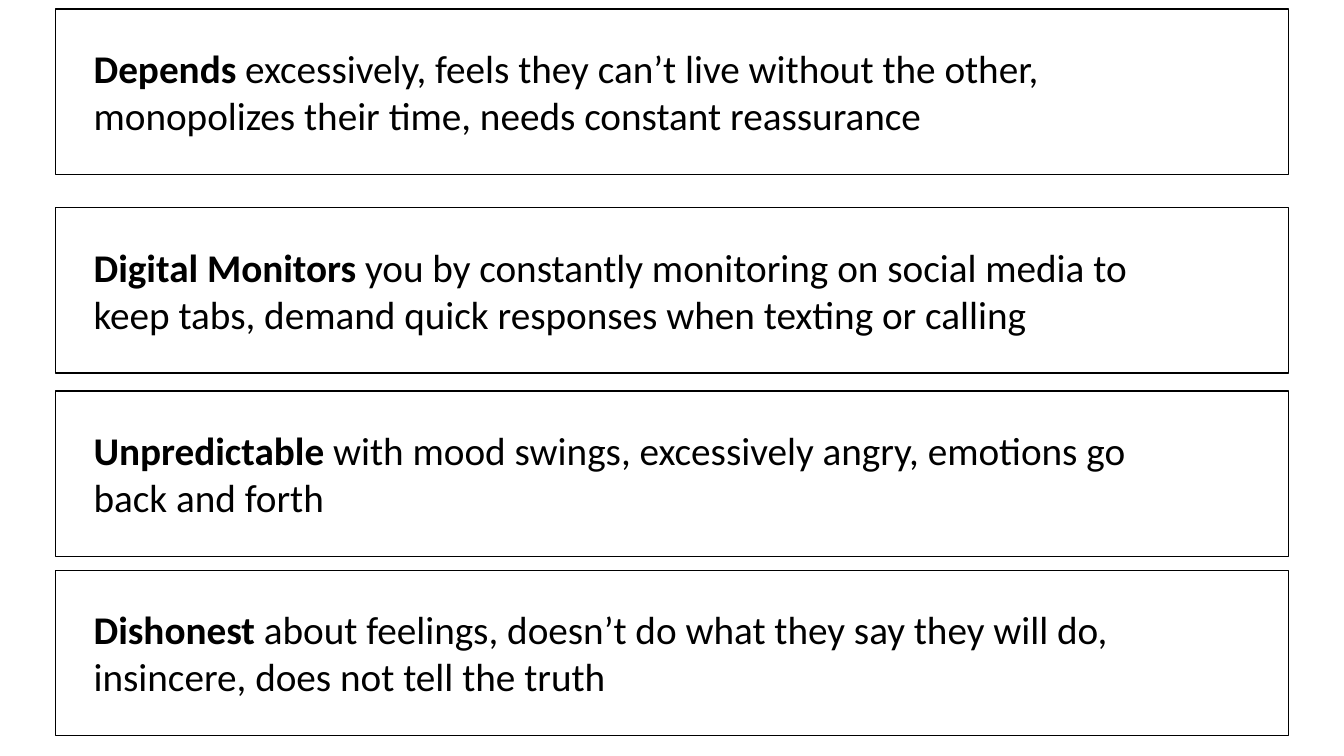
from dataclasses import dataclass

from pptx import Presentation
from pptx.dml.color import RGBColor
from pptx.enum.shapes import MSO_SHAPE as Shape
from pptx.enum.text import MSO_AUTO_SIZE as AutoSize
from pptx.util import Emu, Pt

PX = 9144


@dataclass(frozen=True)
class Theme:
    """Colours, font and sizes of the slide."""
    paper: RGBColor = RGBColor(0xFF, 0xFF, 0xFF)
    ink: RGBColor = RGBColor(0x00, 0x00, 0x00)
    font: str = "Calibri"
    body: int = 28
    border: int = 1


class SlideBuilder:
    """Draws styled elements on one slide."""

    def __init__(self, slide, theme):
        """Keep the slide and its theme."""
        self.slide = slide
        self.theme = theme

    def card(self, *box):
        """Add an outlined rectangle."""
        sp = self.slide.shapes.add_shape(Shape.RECTANGLE, *px(*box))
        sp.shadow.inherit = False
        sp.fill.solid()
        sp.fill.fore_color.rgb = self.theme.paper
        sp.line.color.rgb = self.theme.ink
        sp.line.width = Pt(self.theme.border)

    def statement(self, lead, rest, *box):
        """Add a text box that opens with a bold lead."""
        tf = self.slide.shapes.add_textbox(*px(*box)).text_frame
        tf.word_wrap = True
        tf.auto_size = AutoSize.SHAPE_TO_FIT_TEXT
        p = tf.paragraphs[0]
        for text, bold in ((lead, True), (rest, False)):
            r = p.add_run()
            r.text = text
            r.font.name = self.theme.font
            r.font.size = Pt(self.theme.body)
            r.font.bold = bold
            r.font.color.rgb = self.theme.ink


def px(*lengths):
    """Turn px lengths into EMU."""
    return [Emu(n * PX) for n in lengths]


SIGNS = [
    (9, "Depends", " excessively, feels they can’t live without the other, "
     "monopolizes their time, needs constant reassurance"),
    (206, "Digital Monitors ", "you by constantly monitoring on social media to "
     "keep tabs, demand quick responses when texting or calling"),
    (388, "Unpredictable ", "with mood swings, excessively angry, emotions go "
     "back and forth"),
    (566, "Dishonest ", "about feelings, doesn’t do what they say they will do, "
     "insincere, does not tell the truth"),
]


def main():
    """Build the slide and save it."""
    prs = Presentation()
    prs.slide_width, prs.slide_height = px(1333, 750)
    s = SlideBuilder(prs.slides.add_slide(prs.slide_layouts[6]), Theme())
    for top, _, _ in SIGNS:
        s.card(55, top, 1223, 164)
    for top, lead, rest in SIGNS:
        s.statement(lead, rest, 83, top + 30, 1115, 104)
    prs.save("out.pptx")


if __name__ == "__main__":
    main()
